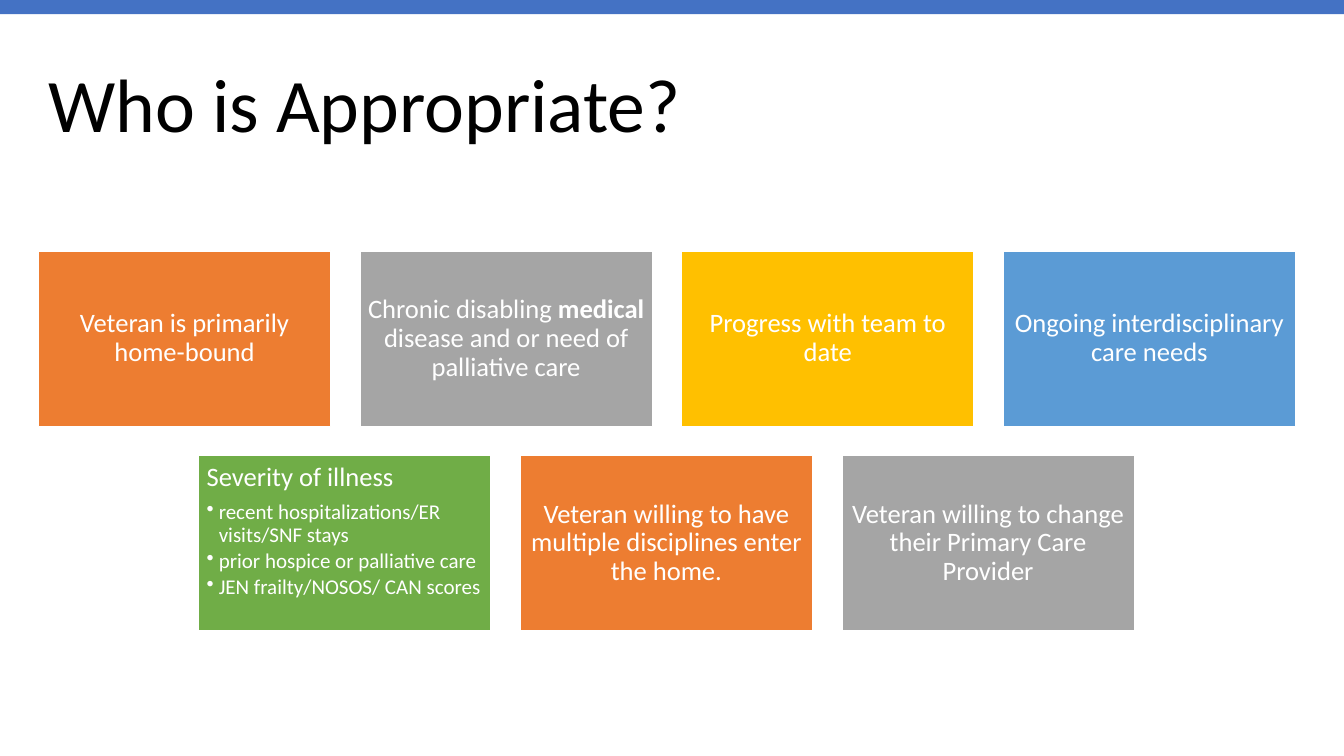
from lxml import etree
from pptx import Presentation
from pptx.dml.color import RGBColor
from pptx.enum.shapes import MSO_SHAPE
from pptx.enum.text import MSO_ANCHOR, MSO_AUTO_SIZE, PP_ALIGN
from pptx.oxml.ns import qn
from pptx.util import Pt

RECTANGLE = MSO_SHAPE.RECTANGLE
TOP, MIDDLE = MSO_ANCHOR.TOP, MSO_ANCHOR.MIDDLE
LEFT, CENTER = PP_ALIGN.LEFT, PP_ALIGN.CENTER
NO_FIT = MSO_AUTO_SIZE.NONE

BLACK = RGBColor(0x00, 0x00, 0x00)
WHITE = RGBColor(0xFF, 0xFF, 0xFF)
BLUE = RGBColor(0x44, 0x72, 0xC4)
ORANGE = RGBColor(0xED, 0x7D, 0x31)
GRAY = RGBColor(0xA5, 0xA5, 0xA5)
GOLD = RGBColor(0xFF, 0xC0, 0x00)
SKY = RGBColor(0x5B, 0x9B, 0xD5)
GREEN = RGBColor(0x70, 0xAD, 0x47)

# Content: each card is fill, heading runs (text, bold), bullets
TITLE = "Who is Appropriate?"
CARD_ROWS = [
    [
        (ORANGE, [("Veteran is primarily home-bound", False)], []),
        (GRAY, [("Chronic disabling", False), (" medical ", True),
                ("disease and or need of palliative care", False)], []),
        (GOLD, [("Progress with team to date", False)], []),
        (SKY, [("Ongoing interdisciplinary care needs", False)], []),
    ],
    [
        (GREEN, [("Severity of illness", False)],
         ["recent hospitalizations/ER visits/SNF stays",
          "prior hospice or palliative care",
          "JEN frailty/NOSOS/ CAN scores"]),
        (ORANGE, [("Veteran willing to have multiple disciplines enter the home.", False)], []),
        (GRAY, [("Veteran willing to change their Primary Care Provider", False)], []),
    ],
]

# Layout in px, 100 px to the inch
PX = 9144
PAGE_W, PAGE_H = 1333, 750
BAR_H = 14
TITLE_BOX = (38, 35, 1248, 145)
CARD_W, CARD_H = 290, 174
GAP = 29
CARDS_LEFT, CARDS_TOP = 38, 249
INSET, INDENT = 8, 12

TITLE_FONT = {"name": "Calibri", "size": Pt(54)}
HEADING_FONT = {"name": "Calibri", "size": Pt(19)}
BULLET_FONT = {"name": "Calibri", "size": Pt(15)}
HEADING_AFTER, BULLET_AFTER = Pt(6.65), Pt(2.25)


def set_all(target, values):
    for name, value in values.items():
        setattr(target, name, value)


def add_span(para, text, font, color, bold=False):
    span = para.add_run()
    span.text = text
    set_all(span.font, {**font, "bold": bold})
    span.font.color.rgb = color


def add_rectangle(page, left, top, width, height, fill):
    box = page.shapes.add_shape(RECTANGLE, *(n * PX for n in (left, top, width, height)))
    box.shadow.inherit = False
    box.fill.solid()
    box.fill.fore_color.rgb = fill
    return box


def add_bullet(para):
    properties = para._p.get_or_add_pPr()
    properties.set("marL", str(INDENT * PX))
    properties.set("indent", str(-INDENT * PX))
    etree.SubElement(properties, qn("a:buChar")).set("char", "•")


def add_card(page, left, top, fill, heading, bullets):
    box = add_rectangle(page, left, top, CARD_W, CARD_H, fill)
    box.line.color.rgb = WHITE
    box.line.width = Pt(1)
    frame = box.text_frame
    set_all(frame, {"word_wrap": True, "vertical_anchor": TOP if bullets else MIDDLE})
    set_all(frame, {f"margin_{side}": INSET * PX for side in ("left", "top", "right", "bottom")})
    para = frame.paragraphs[0]
    set_all(para, {"alignment": LEFT if bullets else CENTER,
                   "line_spacing": 0.9, "space_after": HEADING_AFTER})
    for text, bold in heading:
        add_span(para, text, HEADING_FONT, WHITE, bold)
    for text in bullets:
        para = frame.add_paragraph()
        add_bullet(para)
        set_all(para, {"level": 1, "alignment": LEFT,
                       "line_spacing": 0.9, "space_after": BULLET_AFTER})
        add_span(para, text, BULLET_FONT, WHITE)


def main():
    deck = Presentation()
    set_all(deck, {"slide_width": PAGE_W * PX, "slide_height": PAGE_H * PX})
    page = deck.slides.add_slide(deck.slide_layouts[5])

    # Title
    title = page.shapes.title
    set_all(title, dict(zip(("left", "top", "width", "height"), (n * PX for n in TITLE_BOX))))
    set_all(title.text_frame, {"word_wrap": True, "auto_size": NO_FIT, "vertical_anchor": MIDDLE})
    para = title.text_frame.paragraphs[0]
    set_all(para, {"alignment": LEFT, "line_spacing": 0.9})
    add_span(para, TITLE, TITLE_FONT, BLACK)

    # Top bar
    bar = add_rectangle(page, 0, 0, PAGE_W, BAR_H, BLUE)
    bar.line.fill.background()

    # Cards: every row is centred under the widest one
    pitch = CARD_W + GAP
    widest = max(len(cards) for cards in CARD_ROWS)
    for row, cards in enumerate(CARD_ROWS):
        row_left = CARDS_LEFT + (widest - len(cards)) * pitch // 2
        for column, card in enumerate(cards):
            add_card(page, row_left + column * pitch, CARDS_TOP + row * (CARD_H + GAP), *card)

    deck.save("out.pptx")


if __name__ == "__main__":
    main()
